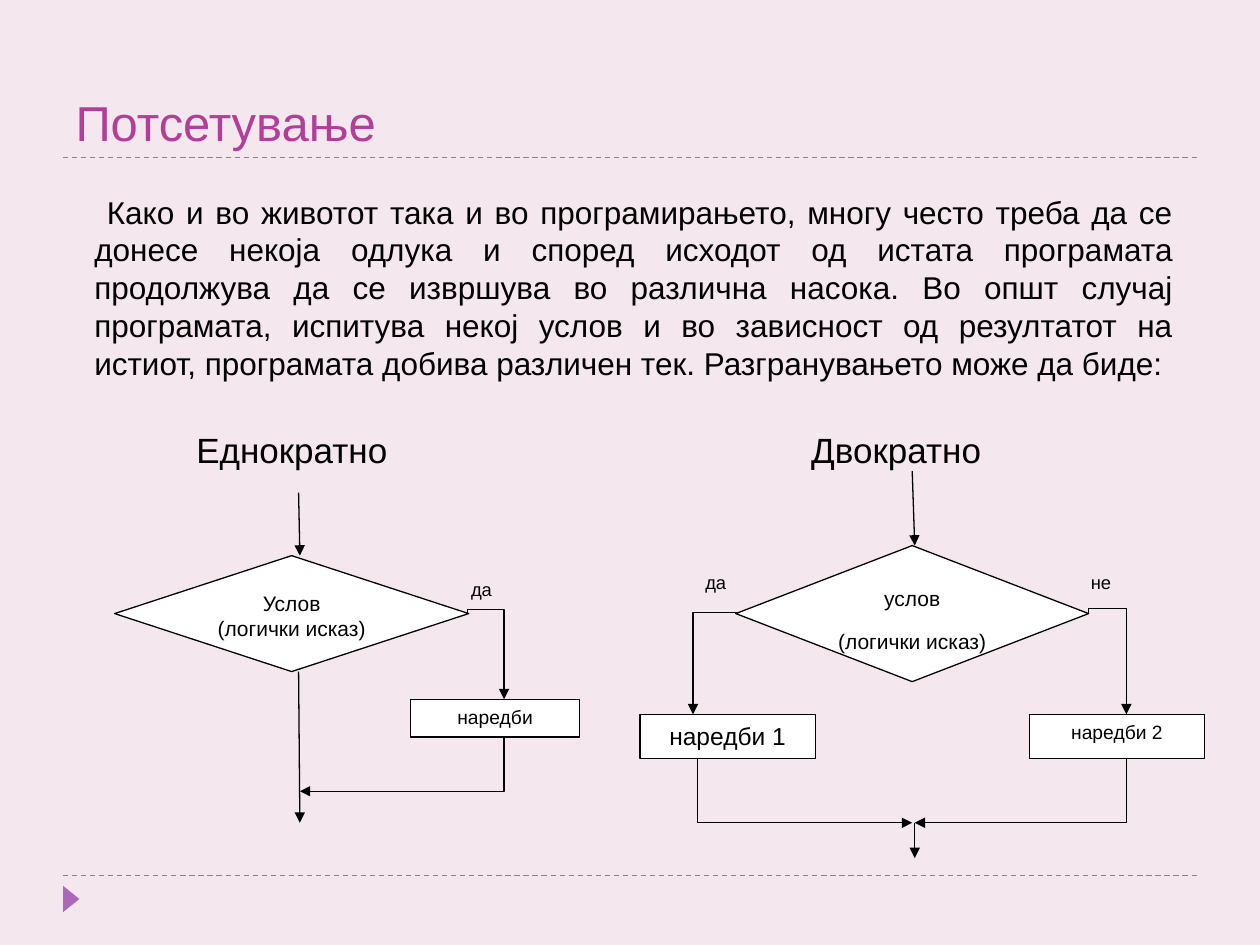
import pptx
import pptx.util
import pptx.dml.color
import pptx.enum.dml
import pptx.enum.shapes
import pptx.enum.text
from lxml import etree

Inches, Pt = pptx.util.Inches, pptx.util.Pt
RGBColor = pptx.dml.color.RGBColor
PP_ALIGN, MSO_ANCHOR = pptx.enum.text.PP_ALIGN, pptx.enum.text.MSO_ANCHOR
SHAPE, CONNECTOR = pptx.enum.shapes.MSO_SHAPE, pptx.enum.shapes.MSO_CONNECTOR

BACKGROUND = RGBColor(0xF4, 0xE7, 0xED)
ACCENT = RGBColor(0xAC, 0x66, 0xBB)
TITLE_COLOR = RGBColor(0xB1, 0x3F, 0x9A)
BLACK = RGBColor(0, 0, 0)
WHITE = RGBColor(0xFF, 0xFF, 0xFF)

TITLE = "Потсетување"
INTRO = (
    "Како и во животот така и во програмирањето, многу често треба да се донесе некоја одлука "
    "и според исходот од истата програмата продолжува да се извршува во различна насока. "
    "Во општ случај програмата, испитува некој услов и во зависност од резултатот на истиот, "
    "програмата добива различен тек. Разгранувањето може да биде:"
)
RULES = [6.95, 1.25]
HEADINGS = [("Еднократно", 1.46, 3.35, 1.73, 0.44), ("Двократно", 6.34, 3.35, 1.56, 0.44)]
BRANCH_LABELS = [
    ("да", 3.64, 4.54, 0.49, 0.33),
    ("да", 5.5, 4.48, 0.5, 0.39),
    ("не", 8.56, 4.48, 0.5, 0.39),
]
DECISION, PROCESS = SHAPE.FLOWCHART_DECISION, SHAPE.RECTANGLE
STEPS = [
    (DECISION, ["Услов", "(логички исказ)"], 12, 0, (0.91, 4.41, 2.81, 0.92)),
    (PROCESS, ["наредби"], 11, 10, (3.26, 5.55, 1.34, 0.3)),
    (DECISION, ["услов", "(логички исказ)"], 12, 10, (5.84, 4.33, 2.8, 1.08)),
    (PROCESS, ["наредби 1"], 14, 10, (5.08, 5.67, 1.39, 0.35)),
    (PROCESS, ["наредби 2"], 11, 10, (8.17, 5.67, 1.39, 0.35)),
]
STRAIGHT_ARROWS = [
    (2.37, 3.91, 2.38, 4.41),
    (2.37, 5.33, 2.38, 6.53),
    (7.24, 3.74, 7.26, 4.33),
    (7.26, 6.53, 7.26, 6.81),
]
BRANCHES_OUT = [
    (3.71, 4.87, 4, 5.55, -0.05),
    (8.64, 4.87, 8.94, 5.67, -0.05),
    (5.84, 4.87, 5.5, 5.67, -0.01),
]
BRANCHES_BACK = [
    (4, 5.85, 2.38, 6.28, 0),
    (5.5, 6.02, 7.24, 6.53, 0.02),
    (8.94, 6.02, 7.26, 6.53, 0),
]


def add_line(kind, ends, color=BLACK):
    line = slide.shapes.add_connector(kind, *map(Inches, ends))
    line.line.color.rgb = color
    line.line.width = Pt(0.75)
    etree.SubElement(line._element.spPr, pptx.oxml.ns.qn("a:effectLst"))
    return line


def add_arrow(kind, ends):
    arrow = add_line(kind, ends)
    head = etree.SubElement(arrow.line._get_or_add_ln(), pptx.oxml.ns.qn("a:tailEnd"))
    head.set("type", "triangle")
    return arrow


def add_elbow(ends, bend):
    elbow = add_arrow(CONNECTOR.ELBOW, ends)
    guides = elbow._element.spPr.prstGeom.get_or_add_avLst()
    guide = etree.SubElement(guides, pptx.oxml.ns.qn("a:gd"))
    guide.set("name", "adj1")
    guide.set("fmla", f"val {round(bend * 100000)}")
    return elbow


def add_down_elbow(x1, y1, x2, y2, bend):
    mid_x, mid_y = (x1 + x2) / 2, (y1 + y2) / 2
    half_w, half_h = (y2 - y1) / 2, abs(x2 - x1) / 2
    side = -1 if x2 > x1 else 1
    ends = (mid_x - side * half_w, mid_y - half_h, mid_x + side * half_w, mid_y + half_h)
    elbow = add_elbow(ends, bend)
    elbow._element.spPr.xfrm.set("rot", str(side * 90 % 360 * 60000))


def write(frame, lines, size, align=PP_ALIGN.LEFT, after=0, color=BLACK):
    frame.text = "\n".join(lines)
    for paragraph in frame.paragraphs:
        paragraph.alignment = align
        paragraph.space_after = Pt(after)
        paragraph.font.name = "Arial"
        paragraph.font.size = Pt(size)
        paragraph.font.color.rgb = color


def add_text(text, box, size, wrap=True, **style):
    frame = slide.shapes.add_textbox(*map(Inches, box)).text_frame
    frame.word_wrap = wrap
    write(frame, [text], size, **style)
    return frame


deck = pptx.Presentation()
deck.slide_width, deck.slide_height = Inches(10), Inches(7.5)
slide = deck.slides.add_slide(deck.slide_layouts[5])
slide.background.fill.solid()
slide.background.fill.fore_color.rgb = BACKGROUND

for y in RULES:
    rule = add_line(CONNECTOR.STRAIGHT, (0.5, y, 9.5, y), ACCENT)
    rule.line.dash_style = pptx.enum.dml.MSO_LINE.DASH

marker = slide.shapes.add_shape(SHAPE.ISOSCELES_TRIANGLE, *map(Inches, (0.46, 7.07, 0.21, 0.13)))
marker.rotation = 90
marker.shadow.inherit = False
marker.fill.solid()
marker.fill.fore_color.rgb = ACCENT
marker.line.fill.background()

title = slide.shapes.title
title.left, title.top, title.width, title.height = map(Inches, (0.5, 0.17, 9, 1.08))
title.text_frame.vertical_anchor = MSO_ANCHOR.BOTTOM
write(title.text_frame, [TITLE], 28, color=TITLE_COLOR)

intro = add_text(INTRO, (0.35, 1.48, 9.06, 1.64), 18, align=PP_ALIGN.JUSTIFY).paragraphs[0]
intro_format = intro._p.get_or_add_pPr()
intro_format.set("marL", str(Inches(0.3)))
intro_format.set("indent", str(Inches(0.1)))

for kind, lines, size, after, box in STEPS:
    step = slide.shapes.add_shape(kind, *map(Inches, box))
    step.shadow.inherit = False
    step.fill.solid()
    step.fill.fore_color.rgb = WHITE
    step.line.color.rgb = BLACK
    step.line.width = Pt(0.75)
    step.text_frame.vertical_anchor = MSO_ANCHOR.TOP
    write(step.text_frame, lines, size, PP_ALIGN.CENTER, after)

for ends in STRAIGHT_ARROWS:
    add_arrow(CONNECTOR.STRAIGHT, ends)
for branch in BRANCHES_OUT:
    add_down_elbow(*branch)
for *ends, bend in BRANCHES_BACK:
    add_elbow(ends, bend)

for text, *box in BRANCH_LABELS:
    add_text(text, box, 10.5, after=10)
for text, *box in HEADINGS:
    add_text(text, box, 20, wrap=False)

deck.save("out.pptx")
